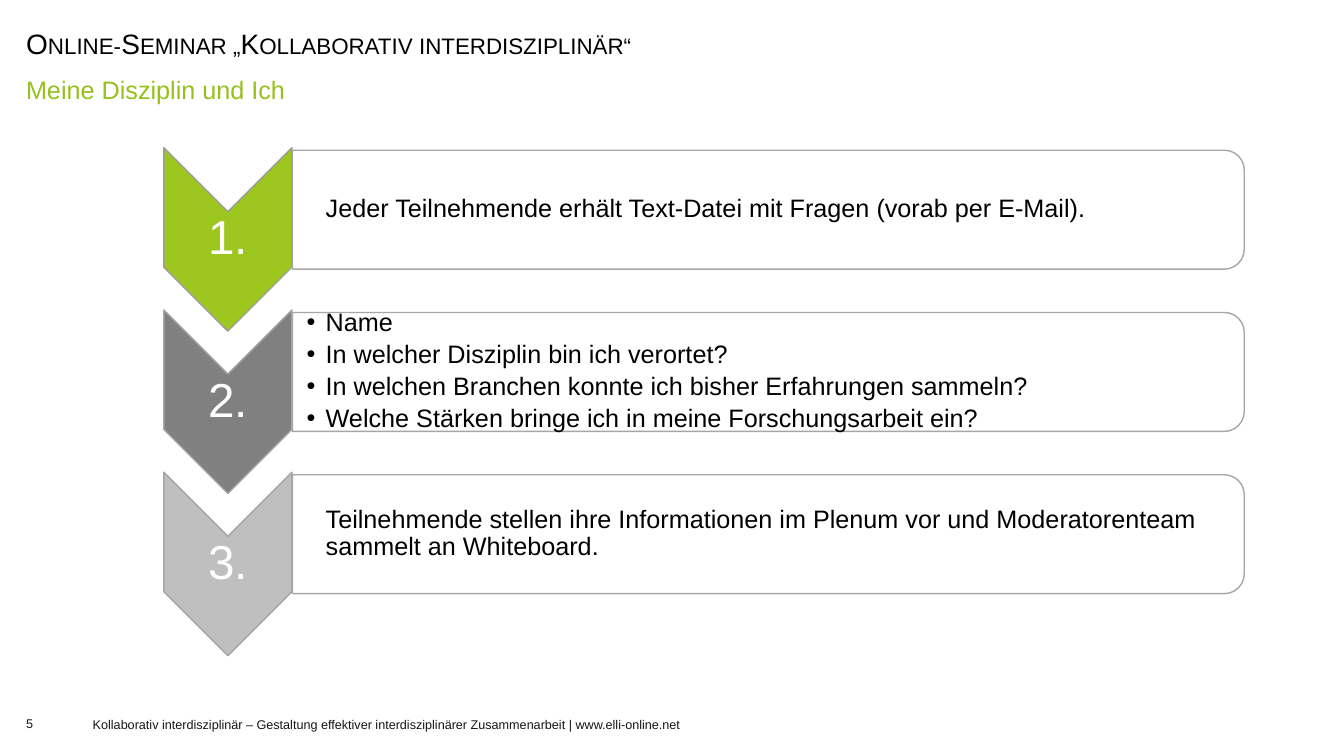
from lxml.etree import SubElement
from pptx import Presentation
from pptx.dml.color import RGBColor
from pptx.enum.shapes import MSO_SHAPE as Shape
from pptx.enum.text import MSO_ANCHOR as Anchor, MSO_AUTO_SIZE as AutoSize, PP_ALIGN as Align
from pptx.oxml.ns import qn
from pptx.util import Inches, Pt

BLACK = RGBColor(0x00, 0x00, 0x00)
WHITE = RGBColor(0xFF, 0xFF, 0xFF)
FOOTER_INK = RGBColor(0x14, 0x16, 0x16)
SUBTITLE_GREEN = RGBColor(0x98, 0xC0, 0x1C)
STEP_GREEN = RGBColor(0x9D, 0xC6, 0x1E)
DARK_GREY = RGBColor(0x80, 0x80, 0x80)
LIGHT_GREY = RGBColor(0xBF, 0xBF, 0xBF)
CHEVRON_LINE = RGBColor(0x9C, 0x9C, 0x9B)
CARD_LINE = RGBColor(0xA6, 0xA6, 0xA6)

STEPS = [
    (STEP_GREEN, CHEVRON_LINE,
     ["Jeder Teilnehmende erhält Text-Datei mit Fragen (vorab per E-Mail)."]),
    (DARK_GREY, CARD_LINE,
     ["Name",
      "In welcher Disziplin bin ich verortet?",
      "In welchen Branchen konnte ich bisher Erfahrungen sammeln?",
      "Welche Stärken bringe ich in meine Forschungsarbeit ein?"]),
    (LIGHT_GREY, CARD_LINE,
     ["Teilnehmende stellen ihre Informationen im Plenum vor und "
      "Moderatorenteam sammelt an Whiteboard."]),
]
FIRST_ROW, ROW_PITCH = 1.47, 1.61

deck = Presentation()
deck.slide_width, deck.slide_height = Inches(13.33), Inches(7.5)
page = deck.slides.add_slide(deck.slide_layouts[5])


def add_text(left, top, width, height, lines, size, color, inset=(0, 0, 0, 0)):
    """Add a wrapped, vertically centred text box with one paragraph per line."""
    box = page.shapes.add_textbox(Inches(left), Inches(top), Inches(width), Inches(height))
    frame = box.text_frame
    frame.word_wrap = True
    frame.vertical_anchor = Anchor.MIDDLE
    (frame.margin_left, frame.margin_top,
     frame.margin_right, frame.margin_bottom) = [Inches(side) for side in inset]
    frame.text = "\n".join(lines)
    for para in frame.paragraphs:
        font = para.runs[0].font
        font.name, font.size, font.color.rgb = "Arial", Pt(size), color
    return frame


def add_turned_shape(kind, left, top, width, height, fill, line):
    """Add a preset shape turned a quarter clockwise."""
    shape = page.shapes.add_shape(kind, Inches(left), Inches(top), Inches(width), Inches(height))
    shape.rotation = 90
    shape.shadow.inherit = False
    shape.fill.solid()
    shape.fill.fore_color.rgb = fill
    shape.line.color.rgb = line
    shape.line.width = Pt(1)


# Title in small caps
title = page.shapes.title
title.left, title.top = Inches(0.16), Inches(0.22)
title.width, title.height = Inches(9.37), Inches(0.39)
title.text_frame.text = "Online-Seminar „Kollaborativ interdisziplinär“"
title.text_frame.auto_size = AutoSize.NONE
title.text_frame.vertical_anchor = Anchor.MIDDLE
para = title.text_frame.paragraphs[0]
para.alignment = Align.LEFT
para.line_spacing = 1.1
span = para.runs[0]
span.font.name, span.font.size, span.font.color.rgb = "Arial", Pt(20), BLACK
span.font._element.set("cap", "small")

# Subtitle
subtitle = add_text(0.16, 0.68, 13.02, 0.39, ["Meine Disziplin und Ich"], 18,
                    SUBTITLE_GREEN, (0.1, 0.05, 0.1, 0.05))
subtitle.paragraphs[0].line_spacing = 1.1

# Steps: numbered chevron and card
for index, (fill, line, lines) in enumerate(STEPS):
    row = FIRST_ROW + index * ROW_PITCH
    add_turned_shape(Shape.CHEVRON, 1.35, row + 0.27, 1.82, 1.27, fill, line)
    number = add_text(1.63, row + 0.63, 1.27, 0.55, [f"{index + 1}."], 34, WHITE, (0.02,) * 4)
    number.paragraphs[0].alignment = Align.CENTER
    number.paragraphs[0].line_spacing = 0.9

    add_turned_shape(Shape.ROUND_2_SAME_RECTANGLE, 7.03, row - 4.11, 1.18, 9.44,
                     WHITE, CARD_LINE)
    content = add_text(2.9, row + 0.07, 9.38, 1.07, lines, 18, BLACK,
                       (0.14, 0.01, 0.01, 0.01))
    for para in content.paragraphs:
        para.line_spacing = 0.9
        para.space_after = Pt(3.3)
        props = para._p.get_or_add_pPr()
        props.set("marL", str(Inches(0.19)))
        if len(lines) > 1:
            props.set("indent", str(Inches(-0.19)))
            SubElement(props, qn("a:buFont"), typeface="Arial")
            SubElement(props, qn("a:buChar"), char="•")

# Footer
add_text(0.26, 6.99, 0.5, 0.38, ["5"], 9, FOOTER_INK)
add_text(0.92, 7, 8.43, 0.37,
         ["Kollaborativ interdisziplinär – Gestaltung effektiver interdisziplinärer "
          "Zusammenarbeit | www.elli-online.net"], 9, FOOTER_INK)

deck.save("out.pptx")
